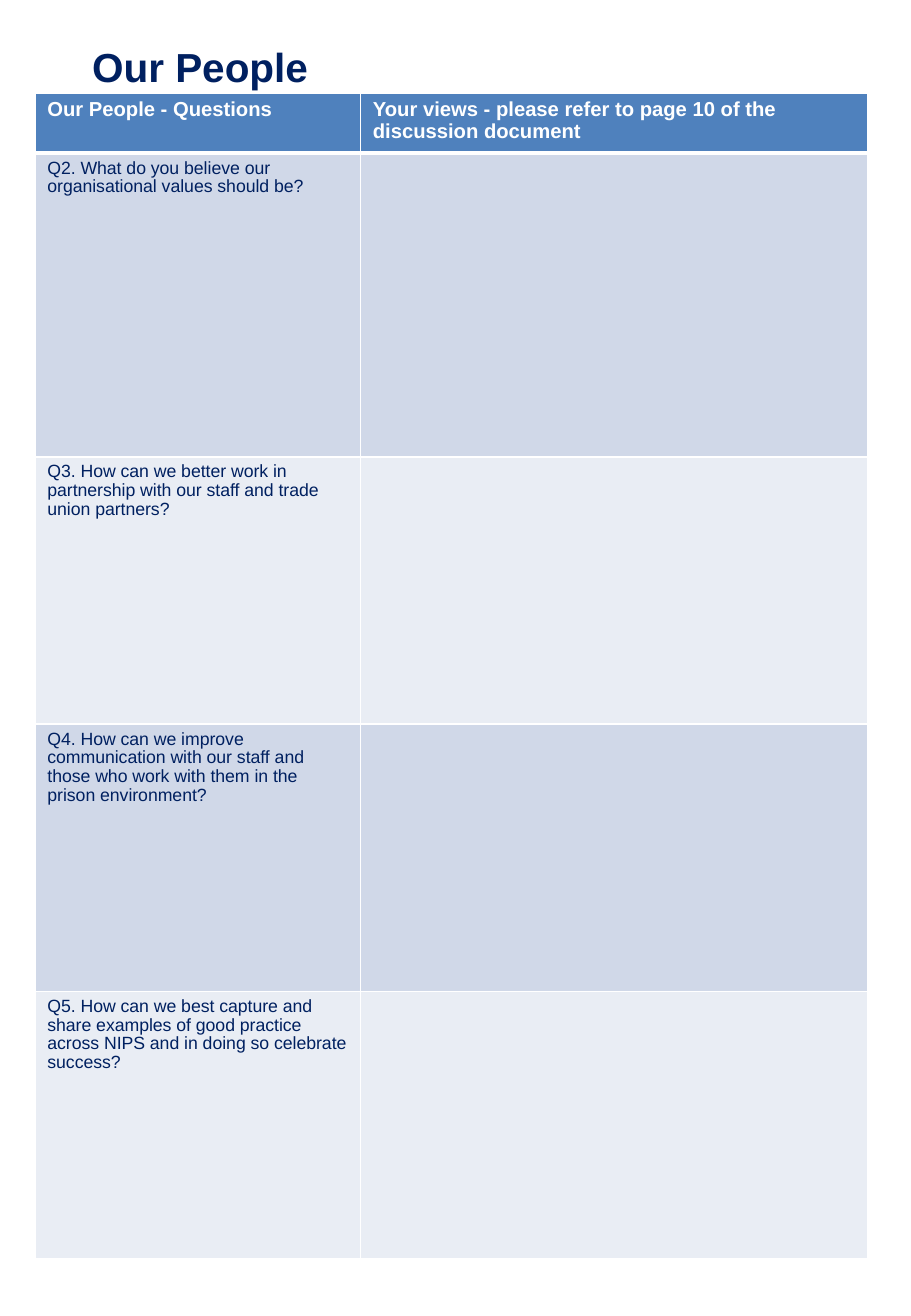
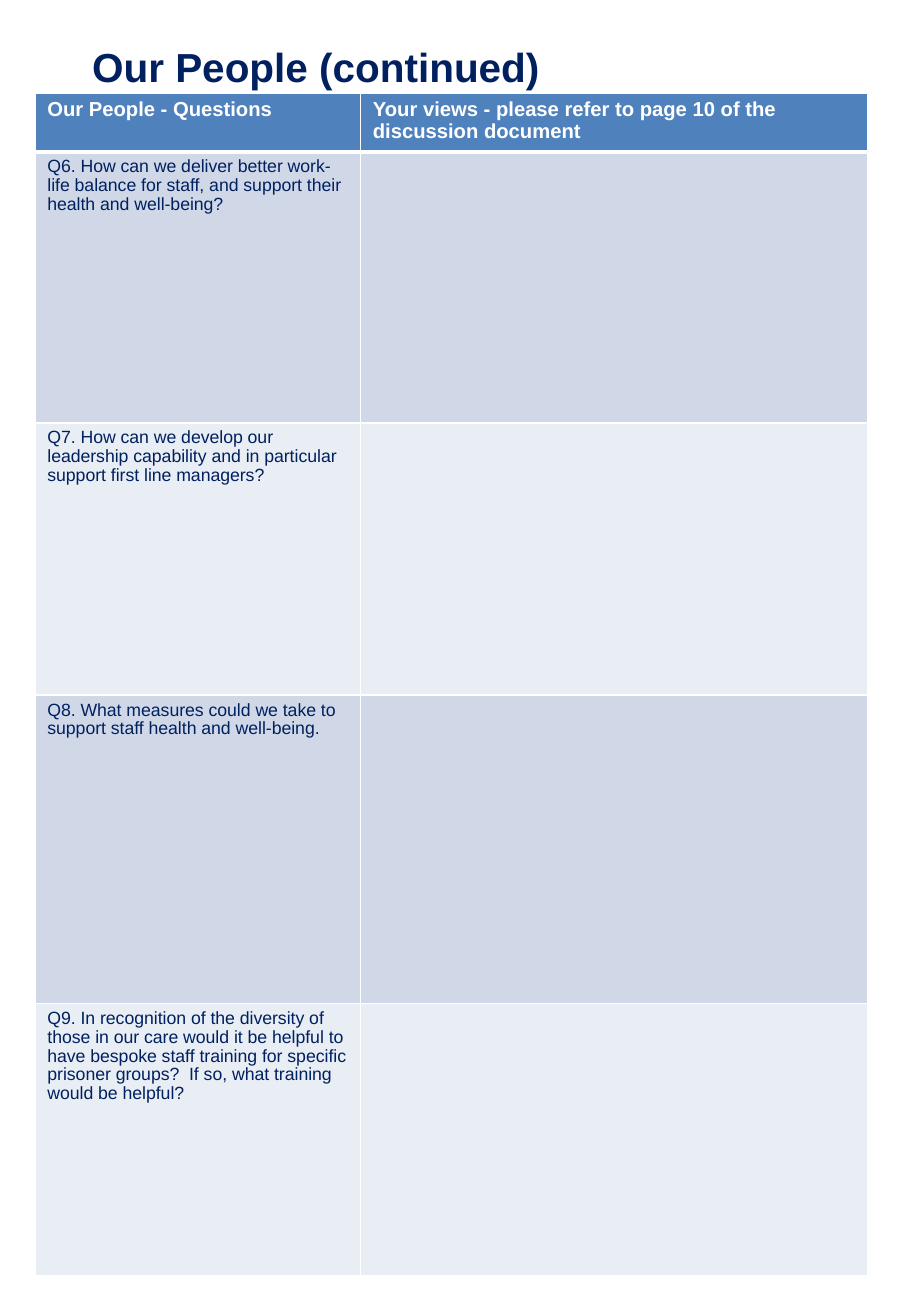
"""Build the two "Our People" consultation question pages."""
import pptx
import pptx.dml.color
import pptx.enum.text
import pptx.util
from lxml import etree
from pptx.oxml.ns import qn

Inches = pptx.util.Inches
Pt = pptx.util.Pt

FONT = "Arial"
COLOURS = {
    "navy": "002060",
    "header": "4F81BD",
    "band": "D0D8E8",
    "band_light": "E9EDF4",
    "white": "FFFFFF",
}
HEADINGS = (
    "Our People - Questions",
    "Your views - please refer to page 10 of the discussion document",
)
COLUMN_WIDTHS = (2.68, 4.17)
TABLE_LEFT, TABLE_TOP = 0.29, 0.77
LINE_SPACING = 0.95

PAGES = [
    {
        "title": "Our People",
        "title_width": 2.09,
        "header_height": 0.49,
        "questions": [
            ("Q2. What do you believe our organisational values should be?", 2.5),
            ("Q3. How can we better work in partnership with our staff and trade "
             "union partners?", 2.2),
            ("Q4. How can we improve communication with our staff and those who "
             "work with them in the prison environment?", 2.2),
            ("Q5. How can we best capture and share examples of good practice "
             "across NIPS and in doing so celebrate success?", 2.2),
        ],
    },
    {
        "title": "Our People (continued)",
        "title_width": 4.01,
        "header_height": 0.47,
        "questions": [
            ("Q6. How can we deliver better work-life balance for staff, and "
             "support their health and well-being?", 2.23),
            ("Q7. How can we develop our leadership capability and in particular "
             "support first line managers?", 2.24),
            ("Q8. What measures could we take to support staff health and "
             "well-being.", 2.54),
            ("Q9. In recognition of the diversity of those in our care would it be "
             "helpful to have bespoke staff training for specific prisoner groups?  "
             "If so, what training would be helpful?", 2.24),
        ],
    },
]


def rgb(name):
    return pptx.dml.color.RGBColor.from_string(COLOURS[name])


def write(text_frame, text, size, colour, bold):
    text_frame.text = text
    for run in text_frame.paragraphs[0].runs:
        run.font.name = FONT
        run.font.size = Pt(size)
        run.font.bold = bold
        run.font.color.rgb = rgb(colour)


def set_borders(cell, top, bottom):
    properties = cell._tc.get_or_add_tcPr()
    widths = {"a:lnL": 1, "a:lnR": 1, "a:lnT": top, "a:lnB": bottom}
    for position, (tag, width) in enumerate(widths.items()):
        line = etree.Element(qn(tag), w=str(Pt(width)))
        fill = etree.SubElement(line, qn("a:solidFill"))
        etree.SubElement(fill, qn("a:srgbClr"), val=COLOURS["white"])
        properties.insert(position, line)


def add_title(slide, title, width):
    box = slide.shapes.add_textbox(
        Inches(0.66), Inches(0.3), Inches(width), Inches(0.5))
    write(box.text_frame, title, 24, "navy", True)
    box.text_frame.word_wrap = False
    box.text_frame.auto_size = pptx.enum.text.MSO_AUTO_SIZE.SHAPE_TO_FIT_TEXT


def add_question_table(slide, header_height, questions):
    rows = [(HEADINGS, header_height)]
    rows += [((question, ""), height) for question, height in questions]
    table = slide.shapes.add_table(
        len(rows), len(COLUMN_WIDTHS), Inches(TABLE_LEFT), Inches(TABLE_TOP),
        Inches(sum(COLUMN_WIDTHS)), Inches(sum(height for _, height in rows))).table
    for column, width in zip(table.columns, COLUMN_WIDTHS):
        column.width = Inches(width)
    for index, (texts, height) in enumerate(rows):
        is_header = index == 0
        band = "header" if is_header else "band" if index % 2 else "band_light"
        size, colour = (12, "white") if is_header else (10.5, "navy")
        table.rows[index].height = Inches(height)
        for cell, text in zip(table.rows[index].cells, texts):
            write(cell.text_frame, text, size, colour, is_header)
            cell.text_frame.paragraphs[0].line_spacing = LINE_SPACING
            cell.fill.solid()
            cell.fill.fore_color.rgb = rgb(band)
            set_borders(cell, 3 if index == 1 else 1, 3 if is_header else 1)


def main():
    presentation = pptx.Presentation()
    presentation.slide_width = Inches(7.5)
    presentation.slide_height = Inches(10.83)
    for page in PAGES:
        slide = presentation.slides.add_slide(presentation.slide_layouts[6])
        add_title(slide, page["title"], page["title_width"])
        add_question_table(slide, page["header_height"], page["questions"])
    presentation.save("out.pptx")


if __name__ == "__main__":
    main()
